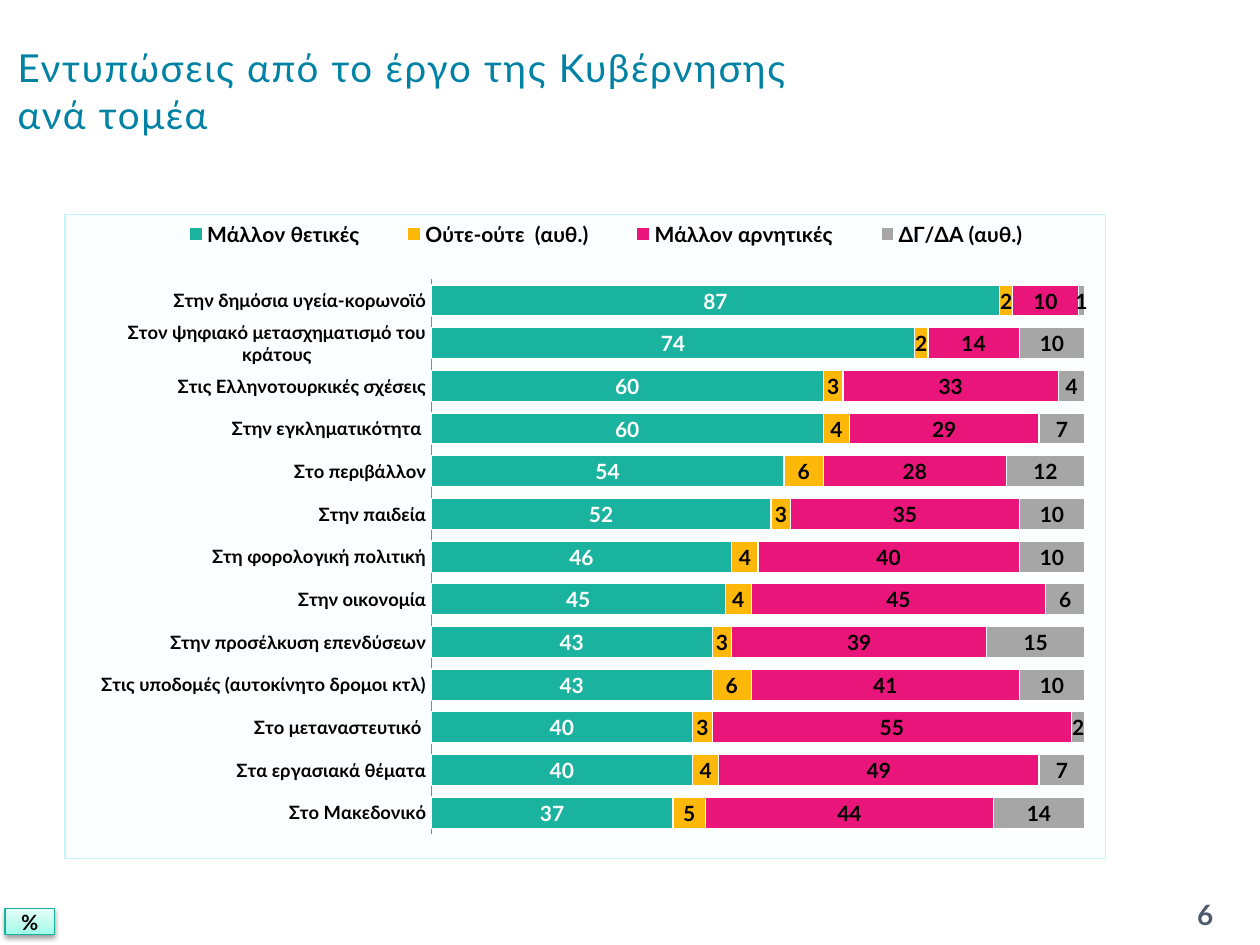
from dataclasses import dataclass

import pptx
import pptx.chart.data
import pptx.dml.color
import pptx.enum.chart
import pptx.enum.shapes
import pptx.enum.text
import pptx.oxml
import pptx.oxml.ns
import pptx.util
from pptx.util import Inches

FONT = "Lato"
COLORS = {
    "title": "0082A5", "number": "4E5B6F", "black": "000000", "white": "FFFFFF",
    "panel": "C5F3FF", "axis": "868686", "positive": "1AB39F", "neither": "FEB80A",
    "negative": "EA157A", "unknown": "A6A6A6", "badge_line": "16B39E",
    "badge_dark": "9DFDE8", "badge_mid": "BBFCED", "badge_light": "E4FFF9",
}
CATEGORIES = [
    "Στην δημόσια υγεία-κορωνοϊό", "Στον ψηφιακό μετασχηματισμό του κράτους",
    "Στις Ελληνοτουρκικές σχέσεις", "Στην εγκληματικότητα ", "Στο περιβάλλον",
    "Στην παιδεία", "Στη φορολογική πολιτική", "Στην οικονομία",
    "Στην προσέλκυση επενδύσεων", "Στις υποδομές (αυτοκίνητο δρομοι κτλ)",
    "Στο μεταναστευτικό ", "Στα εργασιακά θέματα", "Στο Μακεδονικό",
]


@dataclass
class Answer:
    name: str
    color: str
    label_color: str
    values: list[int]


ANSWERS = [
    Answer("Μάλλον θετικές", "positive", "white",
           [87, 74, 60, 60, 54, 52, 46, 45, 43, 43, 40, 40, 37]),
    Answer("Ούτε-ούτε  (αυθ.)", "neither", "black",
           [2, 2, 3, 4, 6, 3, 4, 4, 3, 6, 3, 4, 5]),
    Answer("Μάλλον αρνητικές", "negative", "black",
           [10, 14, 33, 29, 28, 35, 40, 45, 39, 41, 55, 49, 44]),
    Answer("ΔΓ/ΔΑ (αυθ.)", "unknown", "black",
           [1, 10, 4, 7, 12, 10, 10, 6, 15, 10, 2, 7, 14]),
]


def rgb(name: str) -> pptx.dml.color.RGBColor:
    return pptx.dml.color.RGBColor.from_string(COLORS[name])


def xml(text: str):
    """Parse an element that uses the a: and c: prefixes."""
    tag, rest = text.split(">", 1)
    slash = "/" if tag.endswith("/") else ""
    names = pptx.oxml.ns.nsdecls("a", "c")
    return pptx.oxml.parse_xml(f"{tag.rstrip('/')} {names}{slash}>{rest}")


def style_font(font, size: float, color: str, bold: bool = False) -> None:
    font.name = FONT
    font.size = pptx.util.Pt(size)
    font.bold = bold
    font.color.rgb = rgb(color)


def write(shape, text: str, size: float, color: str, bold: bool, align):
    frame = shape.text_frame
    frame.word_wrap = True
    frame.vertical_anchor = pptx.enum.text.MSO_ANCHOR.MIDDLE
    para = frame.paragraphs[0]
    para.alignment = align
    span = para.add_run()
    span.text = text
    style_font(span.font, size, color, bold)
    return span


def manual_layout(x: float, y: float, width: float, height: float, inner: bool = False):
    target = '<c:layoutTarget val="inner"/>' if inner else ""
    return xml(
        f'<c:layout><c:manualLayout>{target}<c:xMode val="edge"/><c:yMode val="edge"/>'
        f'<c:x val="{x}"/><c:y val="{y}"/><c:w val="{width}"/><c:h val="{height}"/>'
        "</c:manualLayout></c:layout>")


def add_title(page) -> None:
    title = page.shapes.title
    title.left, title.top = Inches(0.04), Inches(0.13)
    title.width, title.height = Inches(6.77), Inches(1.18)
    span = write(title, "Εντυπώσεις από το έργο της Κυβέρνησης ανά τομέα",
                 22, "title", False, pptx.enum.text.PP_ALIGN.LEFT)
    span.font._element.set("spc", "100")


def style_series(series, answer: Answer) -> None:
    series.format.fill.solid()
    series.format.fill.fore_color.rgb = rgb(answer.color)
    series.format.line.color.rgb = rgb("white")
    series.format.line.width = pptx.util.Pt(0.75)
    labels = series.data_labels
    labels.show_value = True
    labels.number_format = "0"
    labels.number_format_is_linked = False
    style_font(labels.font, 12, answer.label_color, True)


def style_axes(chart) -> None:
    marks = pptx.enum.chart.XL_TICK_MARK
    axis = chart.category_axis
    axis.reverse_order = True
    axis.major_tick_mark = axis.minor_tick_mark = marks.NONE
    axis.has_major_gridlines = False
    axis.format.line.color.rgb = rgb("axis")
    style_font(axis.tick_labels.font, 10.5, "black", True)
    chart.value_axis.has_major_gridlines = False
    chart.value_axis.visible = False


def style_legend(chart) -> None:
    chart.has_legend = True
    legend = chart.legend
    legend.position = pptx.enum.chart.XL_LEGEND_POSITION.TOP
    legend.include_in_layout = False
    style_font(legend.font, 12, "black", True)
    for old in legend._element.findall(pptx.oxml.ns.qn("c:layout")):
        legend._element.remove(old)
    position = legend._element.find(pptx.oxml.ns.qn("c:legendPos"))
    position.addnext(manual_layout(0.08, 0.0, 0.88, 0.06))


def style_panel(chart) -> None:
    """Place the plot area, and tint and frame the whole chart."""
    root = chart._chartSpace
    plot_area = root.chart.plotArea
    for old in plot_area.findall(pptx.oxml.ns.qn("c:layout")):
        plot_area.remove(old)
    plot_area.insert(0, manual_layout(0.352, 0.1, 0.628, 0.862, inner=True))
    panel = COLORS["panel"]
    root.chart.addnext(xml(
        f'<c:spPr><a:solidFill><a:srgbClr val="{panel}"><a:alpha val="6000"/></a:srgbClr>'
        f'</a:solidFill><a:ln w="9525"><a:solidFill><a:srgbClr val="{panel}"/>'
        "</a:solidFill></a:ln></c:spPr>"))


def add_opinion_chart(page) -> None:
    data = pptx.chart.data.CategoryChartData(number_format="0")
    data.categories = CATEGORIES
    for answer in ANSWERS:
        data.add_series(answer.name, answer.values)
    chart = page.shapes.add_chart(
        pptx.enum.chart.XL_CHART_TYPE.BAR_STACKED_100,
        Inches(0.51), Inches(1.7), Inches(8.27), Inches(5.12), data).chart
    chart.has_title = False
    style_font(chart.font, 10, "black")
    plot = chart.plots[0]
    plot.gap_width, plot.overlap = 37, 100
    plot.vary_by_categories = False
    for series, answer in zip(plot.series, ANSWERS):
        style_series(series, answer)
    style_axes(chart)
    style_legend(chart)
    style_panel(chart)


def add_percent_badge(page) -> None:
    badge = page.shapes.add_shape(
        pptx.enum.shapes.MSO_SHAPE.RECTANGLE,
        Inches(0.04), Inches(7.21), Inches(0.39), Inches(0.21))
    badge.line.color.rgb = rgb("badge_line")
    badge.line.width = pptx.util.Pt(0.75)
    stops = "".join(
        f'<a:gs pos="{place * 1000}"><a:srgbClr val="{COLORS[name]}"/></a:gs>'
        for place, name in [(0, "badge_dark"), (35, "badge_mid"), (100, "badge_light")])
    properties = badge._element.spPr
    properties.find(pptx.oxml.ns.qn("a:prstGeom")).addnext(xml(
        f'<a:gradFill><a:gsLst>{stops}</a:gsLst><a:lin ang="16200000" scaled="1"/></a:gradFill>'))
    properties.append(xml(
        '<a:effectLst><a:outerShdw blurRad="39370" dist="20320" dir="5400000" rotWithShape="0">'
        f'<a:srgbClr val="{COLORS["black"]}"><a:alpha val="38000"/></a:srgbClr>'
        "</a:outerShdw></a:effectLst>"))
    write(badge, "%", 12, "black", True, pptx.enum.text.PP_ALIGN.CENTER)


def main() -> None:
    deck = pptx.Presentation()
    deck.slide_width, deck.slide_height = Inches(10), Inches(7.5)
    page = deck.slides.add_slide(deck.slide_layouts[5])
    number = page.shapes.add_textbox(Inches(9.17), Inches(7.06), Inches(0.79), Inches(0.4))
    write(number, "6", 16, "number", True, pptx.enum.text.PP_ALIGN.CENTER)
    add_title(page)
    add_opinion_chart(page)
    add_percent_badge(page)
    deck.save("out.pptx")


if __name__ == "__main__":
    main()
